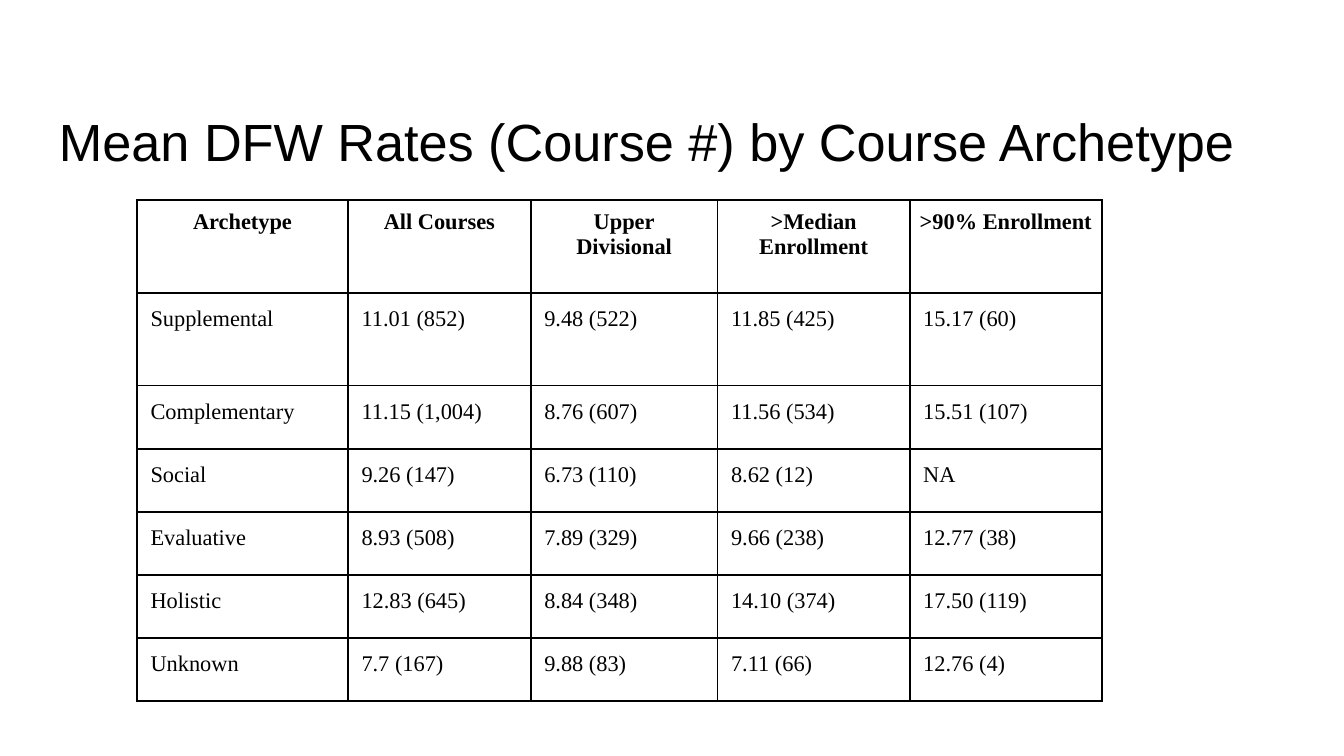
from pptx import Presentation
from pptx.dml.color import RGBColor
from pptx.enum.text import MSO_ANCHOR, PP_ALIGN
from pptx.oxml.xmlchemy import OxmlElement
from pptx.util import Inches, Pt

BLACK = RGBColor(0x00, 0x00, 0x00)

COLUMN_WIDTHS = [1.57, 1.36, 1.39, 1.43, 1.43]
ROW_HEIGHTS = [0.69, 0.69] + [0.47] * 5
ROWS = [
    ["Archetype", "All Courses", "Upper\nDivisional", ">Median\nEnrollment", ">90% Enrollment"],
    ["Supplemental", "11.01 (852)", "9.48 (522)", "11.85 (425)", "15.17 (60)"],
    ["Complementary", "11.15 (1,004)", "8.76 (607)", "11.56 (534)", "15.51 (107)"],
    ["Social", "9.26 (147)", "6.73 (110)", "8.62 (12)", "NA"],
    ["Evaluative", "8.93 (508)", "7.89 (329)", "9.66 (238)", "12.77 (38)"],
    ["Holistic", "12.83 (645)", "8.84 (348)", "14.10 (374)", "17.50 (119)"],
    ["Unknown", "7.7 (167)", "9.88 (83)", "7.11 (66)", "12.76 (4)"],
]


def add_run(paragraph, text, font_name, size, bold=False):
    run = paragraph.add_run()
    run.text = text
    run.font.name = font_name
    run.font.size = Pt(size)
    run.font.bold = bold
    run.font.color.rgb = BLACK


def add_borders(cell):
    properties = cell._tc.get_or_add_tcPr()
    for side in ("a:lnL", "a:lnR", "a:lnT", "a:lnB"):
        line = OxmlElement(side)
        line.set("w", str(Pt(1)))
        fill = OxmlElement("a:solidFill")
        color = OxmlElement("a:srgbClr")
        color.set("val", str(BLACK))
        fill.append(color)
        line.append(fill)
        properties.append(line)


presentation = Presentation()
presentation.slide_width = Inches(10)
presentation.slide_height = Inches(10 * 9 / 16)
slide = presentation.slides.add_slide(presentation.slide_layouts[6])

title = slide.shapes.add_textbox(Inches(0.34), Inches(0.71), Inches(9.32), Inches(0.63))
title_frame = title.text_frame
title_frame.word_wrap = True
title_frame.vertical_anchor = MSO_ANCHOR.TOP
title_frame.margin_top = title_frame.margin_bottom = Inches(0.1)
add_run(title_frame.paragraphs[0], "Mean DFW Rates (Course #) by Course Archetype", "Arial", 28)

table = slide.shapes.add_table(
    len(ROWS), len(COLUMN_WIDTHS), Inches(1.02), Inches(1.49),
    Inches(sum(COLUMN_WIDTHS)), Inches(sum(ROW_HEIGHTS)),
).table
table.horz_banding = False
for column, width in zip(table.columns, COLUMN_WIDTHS):
    column.width = Inches(width)
for row, height in zip(table.rows, ROW_HEIGHTS):
    row.height = Inches(height)

for row_index, values in enumerate(ROWS):
    is_header = row_index == 0
    for column_index, value in enumerate(values):
        cell = table.cell(row_index, column_index)
        add_borders(cell)
        cell.fill.background()
        cell.margin_left = cell.margin_right = Inches(0.07 if is_header else 0.1)
        cell.margin_top = cell.margin_bottom = Inches(0.07 if is_header else 0.1)
        for line_index, text in enumerate(value.split("\n")):
            frame = cell.text_frame
            paragraph = frame.add_paragraph() if line_index else frame.paragraphs[0]
            paragraph.alignment = PP_ALIGN.CENTER if is_header else PP_ALIGN.LEFT
            add_run(paragraph, text, "Times New Roman", 12, is_header)

presentation.save("out.pptx")
